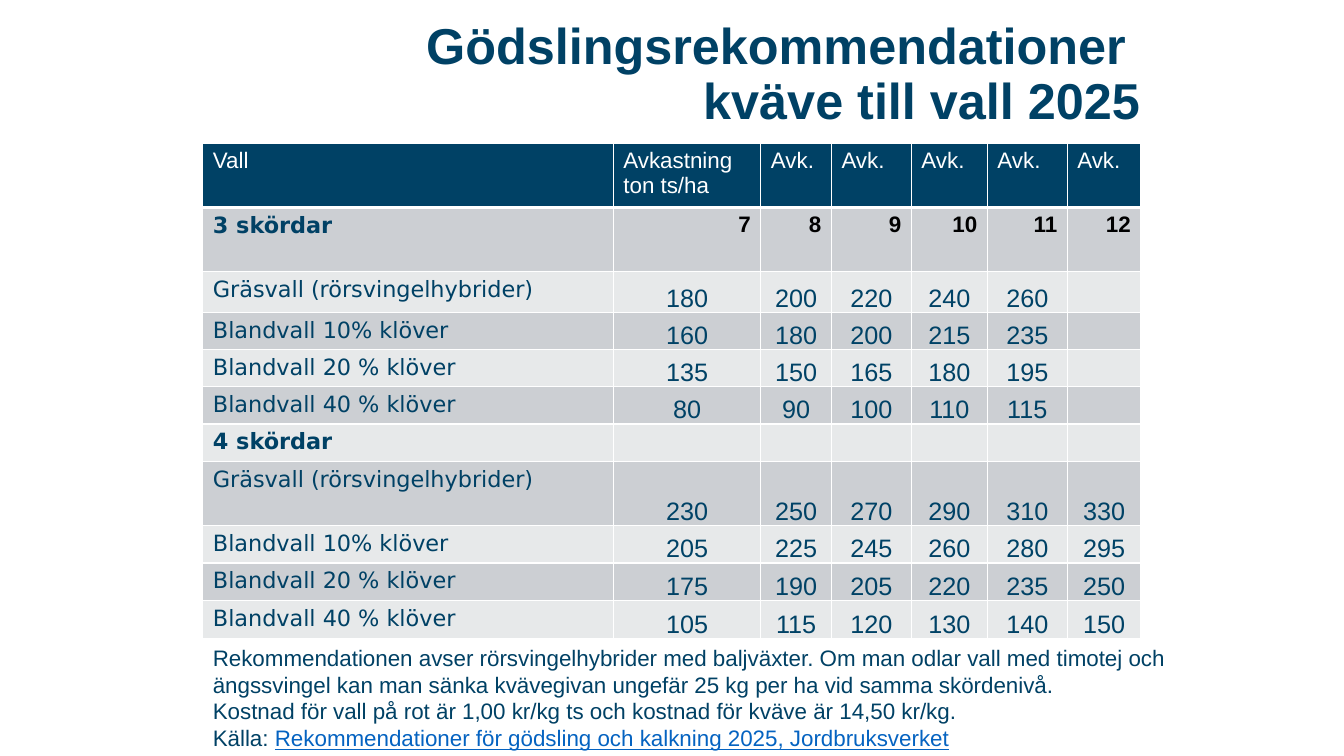
"""Build a slide with nitrogen recommendations for ley in 2025."""
from dataclasses import dataclass

from lxml import etree
from pptx import Presentation
from pptx.dml.color import RGBColor
from pptx.enum.text import MSO_ANCHOR, PP_ALIGN
from pptx.oxml.ns import qn
from pptx.util import Pt

LEFT, CENTER, RIGHT = PP_ALIGN.LEFT, PP_ALIGN.CENTER, PP_ALIGN.RIGHT
TOP, MIDDLE, BOTTOM = MSO_ANCHOR.TOP, MSO_ANCHOR.MIDDLE, MSO_ANCHOR.BOTTOM

TITLE = ("Gödslingsrekommendationer ", "kväve till vall 2025")
HEADER = ("Vall", "Avkastning ton ts/ha", "Avk.", "Avk.", "Avk.", "Avk.", "Avk.")
ROWS = [
    ("3 skördar", 7, 8, 9, 10, 11, 12),
    ("Gräsvall (rörsvingelhybrider)", 180, 200, 220, 240, 260, ""),
    ("Blandvall 10% klöver", 160, 180, 200, 215, 235, ""),
    ("Blandvall 20 % klöver", 135, 150, 165, 180, 195, ""),
    ("Blandvall 40 % klöver", 80, 90, 100, 110, 115, ""),
    ("4 skördar", "", "", "", "", "", ""),
    ("Gräsvall (rörsvingelhybrider)", 230, 250, 270, 290, 310, 330),
    ("Blandvall 10% klöver", 205, 225, 245, 260, 280, 295),
    ("Blandvall 20 % klöver", 175, 190, 205, 220, 235, 250),
    ("Blandvall 40 % klöver", 105, 115, 120, 130, 140, 150),
]
NOTES = [
    "Rekommendationen avser rörsvingelhybrider med baljväxter. Om man odlar vall med timotej och "
    "ängssvingel kan man sänka kvävegivan ungefär 25 kg per ha vid samma skördenivå.",
    "Kostnad för vall på rot är 1,00 kr/kg ts och kostnad för kväve är 14,50 kr/kg.",
    "Källa: ",
]
SOURCE = "Rekommendationer för gödsling och kalkning 2025, Jordbruksverket"

TITLE_BOX = (160, 15.8, 661.6, 76.4)
TABLE_BOX = (144.9, 102.4, 670, 354)
NOTES_BOX = (144.9, 456.5, 719, 83.5)
COLUMN_WIDTHS = (293.2, 105.4, 50.4, 57.1, 54.3, 57.1, 52.5)
ROW_HEIGHTS = (45.8, 45.8, 29.2, 26.6, 26.6, 26.6, 26.6, 46, 26.7, 27, 27)


@dataclass(frozen=True)
class Theme:
    """Colours, fonts and type sizes."""
    navy: str = "004165"
    value: str = "004266"
    black: str = "000000"
    white: str = "FFFFFF"
    link: str = "0563C1"
    bands: tuple = ("E7E9EA", "CCCFD3")
    font: str = "Arial"
    label_font: str = "DejaVu Sans"
    title_size: int = 36
    body_size: int = 16
    value_size: int = 18


THEME = Theme()


def add_span(para, text, color, size=THEME.body_size, font=THEME.font, bold=False):
    """Add one formatted run."""
    span = para.add_run()
    span.text = text
    span.font.name = font
    span.font.size = Pt(size)
    span.font.bold = bold
    span.font.color.rgb = RGBColor.from_string(color)
    return span


def add_box(page, bounds):
    """Add a wrapping text box anchored in the middle."""
    frame = page.shapes.add_textbox(*map(Pt, bounds)).text_frame
    frame.word_wrap = True
    frame.vertical_anchor = MIDDLE
    return frame


def style_cell(cell, fill, bottom_width):
    """Draw white borders and fill the cell."""
    properties = cell._tc.get_or_add_tcPr()
    for side in "LRTB":
        width = bottom_width if side == "B" else 1
        line = etree.SubElement(properties, qn(f"a:ln{side}"), w=str(Pt(width)))
        paint = etree.SubElement(line, qn("a:solidFill"))
        etree.SubElement(paint, qn("a:srgbClr"), val=THEME.white)
    cell.fill.solid()
    cell.fill.fore_color.rgb = RGBColor.from_string(fill)


def write_cell(cell, text, row, column):
    """Write text in the manner of its row and column."""
    para = cell.text_frame.paragraphs[0]
    para.alignment = LEFT
    cell.vertical_anchor = TOP
    if row == 0:
        add_span(para, text, THEME.white)
    elif column == 0:
        add_span(para, text, THEME.navy, font=THEME.label_font, bold=text.endswith("skördar"))
    elif row == 1:
        para.alignment = RIGHT
        add_span(para, str(text), THEME.black, bold=True)
    else:
        cell.margin_left = cell.margin_right = cell.margin_top = cell.margin_bottom = 0
        cell.vertical_anchor = BOTTOM
        para.alignment = CENTER
        if text != "":
            add_span(para, str(text), THEME.value, THEME.value_size)


def add_title(page):
    """Add the right-aligned title."""
    para = add_box(page, TITLE_BOX).paragraphs[0]
    para.alignment = RIGHT
    para.line_spacing = 0.9
    for index, line in enumerate(TITLE):
        if index:
            para.add_line_break()
        add_span(para, line, THEME.navy, THEME.title_size, bold=True)


def add_recommendations(page):
    """Add the table of nitrogen doses."""
    content = [HEADER, *ROWS]
    table = page.shapes.add_table(len(content), len(HEADER), *map(Pt, TABLE_BOX)).table
    for column, width in zip(table.columns, COLUMN_WIDTHS):
        column.width = Pt(width)
    for row, height in zip(table.rows, ROW_HEIGHTS):
        row.height = Pt(height)
    for row, values in enumerate(content):
        fill = THEME.bands[row % 2] if row else THEME.navy
        for column, text in enumerate(values):
            cell = table.cell(row, column)
            style_cell(cell, fill, 1 if row else 3)
            write_cell(cell, text, row, column)


def add_notes(page):
    """Add the remarks and the source."""
    frame = add_box(page, NOTES_BOX)
    for index, text in enumerate(NOTES):
        para = frame.add_paragraph() if index else frame.paragraphs[0]
        add_span(para, text, THEME.navy)
    add_span(para, SOURCE, THEME.link).font.underline = True


def main():
    """Assemble and save the deck."""
    deck = Presentation()
    deck.slide_width, deck.slide_height = Pt(960), Pt(540)
    page = deck.slides.add_slide(deck.slide_layouts[6])
    add_title(page)
    add_recommendations(page)
    add_notes(page)
    deck.save("out.pptx")


if __name__ == "__main__":
    main()
